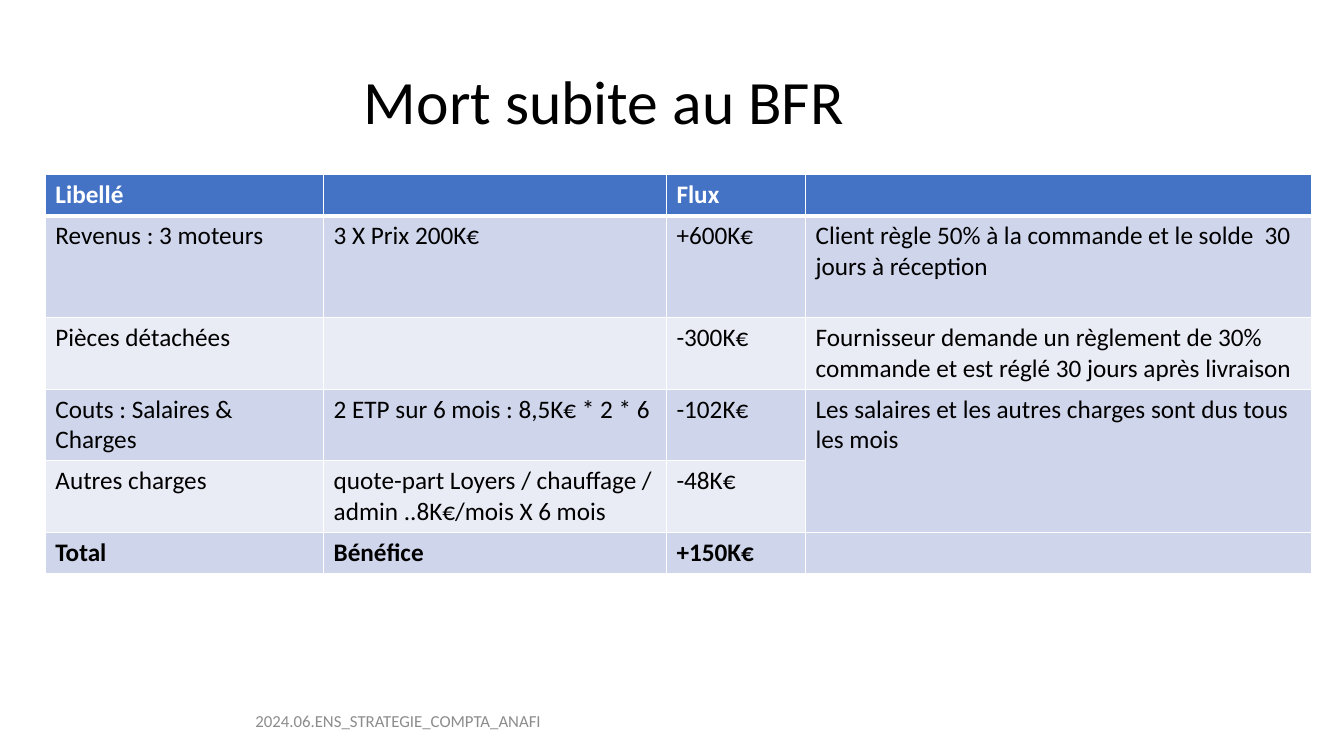
from pptx import Presentation
from pptx import util as u
from pptx.dml.color import RGBColor
from pptx.enum import text
from pptx.oxml import parse_xml
from pptx.oxml.ns import nsdecls

BLACK = RGBColor(0x00, 0x00, 0x00)
WHITE = RGBColor(0xFF, 0xFF, 0xFF)
GREY = RGBColor(0x8C, 0x8C, 0x8C)
BLUE = RGBColor(0x44, 0x72, 0xC4)
DARK = RGBColor(0xCF, 0xD5, 0xEA)
LIGHT = RGBColor(0xE9, 0xEB, 0xF5)


def add_run(para, words, size, color, bold=False):
    run = para.add_run()
    run.text = words
    font = run.font
    font.name = "Calibri"
    font.size = u.Pt(size)
    font.bold = bold
    font.color.rgb = color


def add_edge(cell, side, width):
    """Append a white border; call before the cell gets its fill."""
    cell._tc.get_or_add_tcPr().append(parse_xml(
        f'<a:{side} {nsdecls("a")} w="{u.Pt(width)}"><a:solidFill>'
        f'<a:srgbClr val="{WHITE}"/></a:solidFill></a:{side}>'))


prs = Presentation()
prs.slide_width = u.Inches(13.33)
prs.slide_height = u.Inches(7.5)
slide = prs.slides.add_slide(prs.slide_layouts[5])

# Title
title = slide.shapes.title
title.left, title.top = u.Inches(3.51), u.Inches(0.52)
title.width, title.height = u.Inches(9.38), u.Inches(1.03)
frame = title.text_frame
frame.auto_size = text.MSO_AUTO_SIZE.NONE
frame.vertical_anchor = text.MSO_ANCHOR.MIDDLE
para = frame.paragraphs[0]
para.alignment = text.PP_ALIGN.LEFT
para.line_spacing = 0.9
add_run(para, "Mort subite au BFR", 44, BLACK)

# Cash flow table
rows = [
    ("Libellé", "", "Flux", ""),
    ("Revenus : 3 moteurs", "3 X Prix 200K€", "+600K€",
     "Client règle 50% à la commande et le solde  30 jours à réception"),
    ("Pièces détachées", "", "-300K€",
     "Fournisseur demande un règlement de 30% commande et est réglé "
     "30 jours après livraison"),
    ("Couts : Salaires & Charges", "2 ETP sur 6 mois : 8,5K€ * 2 * 6",
     "-102K€", "Les salaires et les autres charges sont dus tous les mois"),
    ("Autres charges",
     "quote-part Loyers / chauffage / admin ..8K€/mois X 6 mois",
     "-48K€", ""),
    ("Total", "Bénéfice", "+150K€", ""),
]
widths = [2.76, 3.4, 1.38, 5.02]
heights = [0.41, 1.01, 0.71, 0.71, 0.71, 0.41]
last = len(rows) - 1

table = slide.shapes.add_table(
    len(rows), len(widths), u.Inches(0.45), u.Inches(1.73),
    u.Inches(sum(widths)), u.Inches(sum(heights))).table
for col, width in zip(table.columns, widths):
    col.width = u.Inches(width)
for row, height in zip(table.rows, heights):
    row.height = u.Inches(height)

for i, row in enumerate(rows):
    fill = BLUE if i == 0 else DARK if i % 2 else LIGHT
    for j, words in enumerate(row):
        cell = table.cell(i, j)
        for side in ("lnL", "lnR", "lnT", "lnB"):
            thick = (i, side) in ((0, "lnB"), (1, "lnT"))
            add_edge(cell, side, 3 if thick else 1)
        cell.fill.solid()
        cell.fill.fore_color.rgb = fill
        if words:
            add_run(cell.text_frame.paragraphs[0], words, 18,
                    BLACK if i else WHITE, i in (0, last))
table.cell(3, 3).merge(table.cell(4, 3))

# Footer
foot = slide.shapes.add_textbox(
    u.Inches(1.7), u.Inches(6.95), u.Inches(4.5), u.Inches(0.4))
frame = foot.text_frame
frame.word_wrap = True
frame.vertical_anchor = text.MSO_ANCHOR.MIDDLE
para = frame.paragraphs[0]
para.alignment = text.PP_ALIGN.CENTER
add_run(para, "2024.06.ENS_STRATEGIE_COMPTA_ANAFI", 12, GREY)

prs.save("out.pptx")
